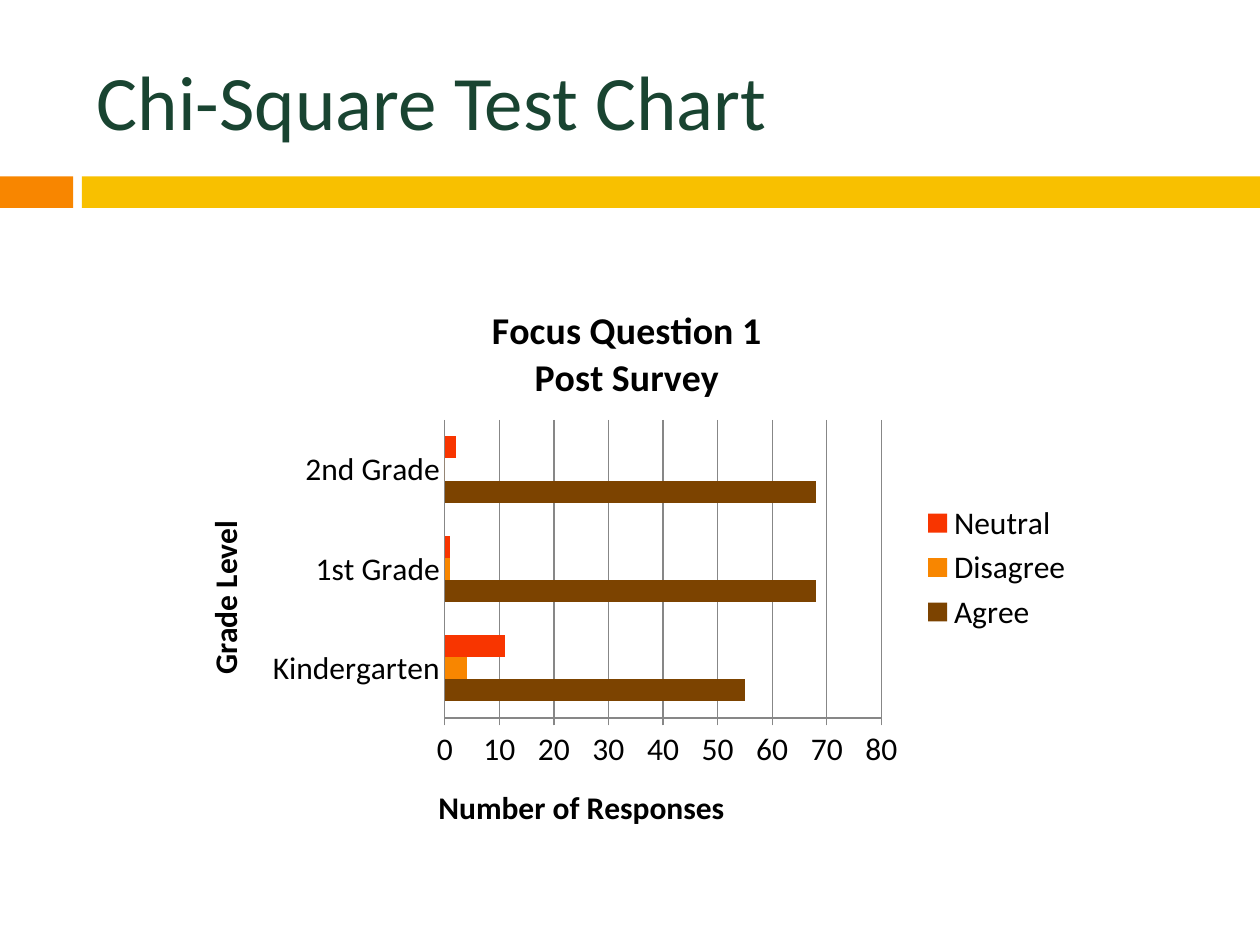
from dataclasses import dataclass

from lxml.etree import SubElement
from pptx import Presentation
from pptx.chart.data import CategoryChartData
from pptx.dml.color import RGBColor
from pptx.enum.chart import XL_CHART_TYPE as ChartType
from pptx.enum.chart import XL_LEGEND_POSITION as LegendPosition
from pptx.enum.chart import XL_TICK_MARK as TickMark
from pptx.enum.shapes import MSO_SHAPE as Preset
from pptx.enum.text import MSO_ANCHOR as Anchor
from pptx.oxml.ns import qn
from pptx.util import Inches, Pt


@dataclass(frozen=True)
class Theme:
    font: str = "Calibri"
    heading: str = "194431"
    text: str = "000000"
    grid: str = "878787"
    orange: str = "F88600"
    yellow: str = "F8C000"
    brown: str = "7C4300"
    red: str = "F83500"
    heading_size: float = 44
    chart_title_size: float = 21.6
    chart_size: float = 18


@dataclass(frozen=True)
class Band:
    left: float
    width: float
    color: str


@dataclass(frozen=True)
class Answer:
    name: str
    counts: tuple[int, ...]
    color: str


THEME = Theme()
BANDS = (Band(0, 0.58, THEME.orange), Band(0.65, 9.35, THEME.yellow))
GRADES = ("Kindergarten", "1st Grade", "2nd Grade")
ANSWERS = (
    Answer("Agree", (55, 68, 68), THEME.brown),
    Answer("Disagree", (4, 1, 0), THEME.orange),
    Answer("Neutral", (11, 1, 2), THEME.red),
)


def style_font(font, *, size: float, color: str = THEME.text, bold: bool = False) -> None:
    font.name = THEME.font
    font.size = Pt(size)
    font.bold = bold
    font.color.rgb = RGBColor.from_string(color)


def write_text(frame, text: str, **style) -> None:
    """Put each line of text in its own paragraph, in one format."""
    for index, line in enumerate(text.split("\n")):
        paragraph = frame.add_paragraph() if index else frame.paragraphs[0]
        run = paragraph.add_run()
        run.text = line
        style_font(run.font, **style)


def draw_band(slide, band: Band) -> None:
    bar = slide.shapes.add_shape(
        Preset.RECTANGLE, Inches(band.left), Inches(1.4), Inches(band.width), Inches(0.25)
    )
    bar.shadow.inherit = False
    bar.fill.solid()
    bar.fill.fore_color.rgb = RGBColor.from_string(band.color)
    bar.line.fill.background()


def draw_heading(slide, text: str) -> None:
    heading = slide.shapes.add_textbox(Inches(0.67), Inches(0.25), Inches(8.92), Inches(1.08))
    frame = heading.text_frame
    frame.word_wrap = True
    frame.vertical_anchor = Anchor.MIDDLE
    write_text(frame, text, size=THEME.heading_size, color=THEME.heading)


def place_plot(chart, **fractions: float) -> None:
    """Fix the inner plot area as fractions of the chart frame."""
    plot_area = chart.plots[0]._element.getparent()
    layout = plot_area.find(qn("c:layout"))
    if layout is None:
        layout = SubElement(plot_area, qn("c:layout"))
        plot_area.insert(0, layout)
    manual = SubElement(layout, qn("c:manualLayout"))
    settings = {"layoutTarget": "inner", "xMode": "edge", "yMode": "edge", **fractions}
    for tag, value in settings.items():
        SubElement(manual, qn(f"c:{tag}")).set("val", str(value))


def style_axis(axis, title: str, tick_mark) -> None:
    write_text(axis.axis_title.text_frame, title, size=THEME.chart_size, bold=True)
    axis.major_tick_mark = tick_mark
    axis.minor_tick_mark = TickMark.NONE
    axis.format.line.color.rgb = RGBColor.from_string(THEME.grid)


def draw_survey_chart(slide) -> None:
    data = CategoryChartData()
    data.categories = GRADES
    for answer in ANSWERS:
        data.add_series(answer.name, answer.counts)
    chart = slide.shapes.add_chart(
        ChartType.BAR_CLUSTERED, Inches(1.4), Inches(2.25), Inches(7.22), Inches(4.51), data
    ).chart
    style_font(chart.font, size=THEME.chart_size)
    write_text(
        chart.chart_title.text_frame,
        "Focus Question 1 \nPost Survey ",
        size=THEME.chart_title_size,
        bold=True,
    )
    chart.has_legend = True
    chart.legend.position = LegendPosition.RIGHT
    chart.legend.include_in_layout = False

    survey = chart.plots[0]
    survey.gap_width = 150
    survey.vary_by_categories = False
    for series, answer in zip(survey.series, ANSWERS):
        series.format.fill.solid()
        series.format.fill.fore_color.rgb = RGBColor.from_string(answer.color)

    style_axis(chart.category_axis, "Grade Level ", TickMark.NONE)
    responses = chart.value_axis
    style_axis(responses, "Number of Responses ", TickMark.OUTSIDE)
    responses.minimum_scale, responses.maximum_scale, responses.major_unit = 0, 80, 10
    responses.major_gridlines.format.line.color.rgb = RGBColor.from_string(THEME.grid)
    place_plot(chart, x=0.295, y=0.24, w=0.48, h=0.525)


def main() -> None:
    deck = Presentation()
    deck.slide_width, deck.slide_height = Inches(10), Inches(7.5)
    slide = deck.slides.add_slide(deck.slide_layouts[6])
    for band in BANDS:
        draw_band(slide, band)
    draw_heading(slide, "Chi-Square Test Chart")
    draw_survey_chart(slide)
    deck.save("out.pptx")


if __name__ == "__main__":
    main()
